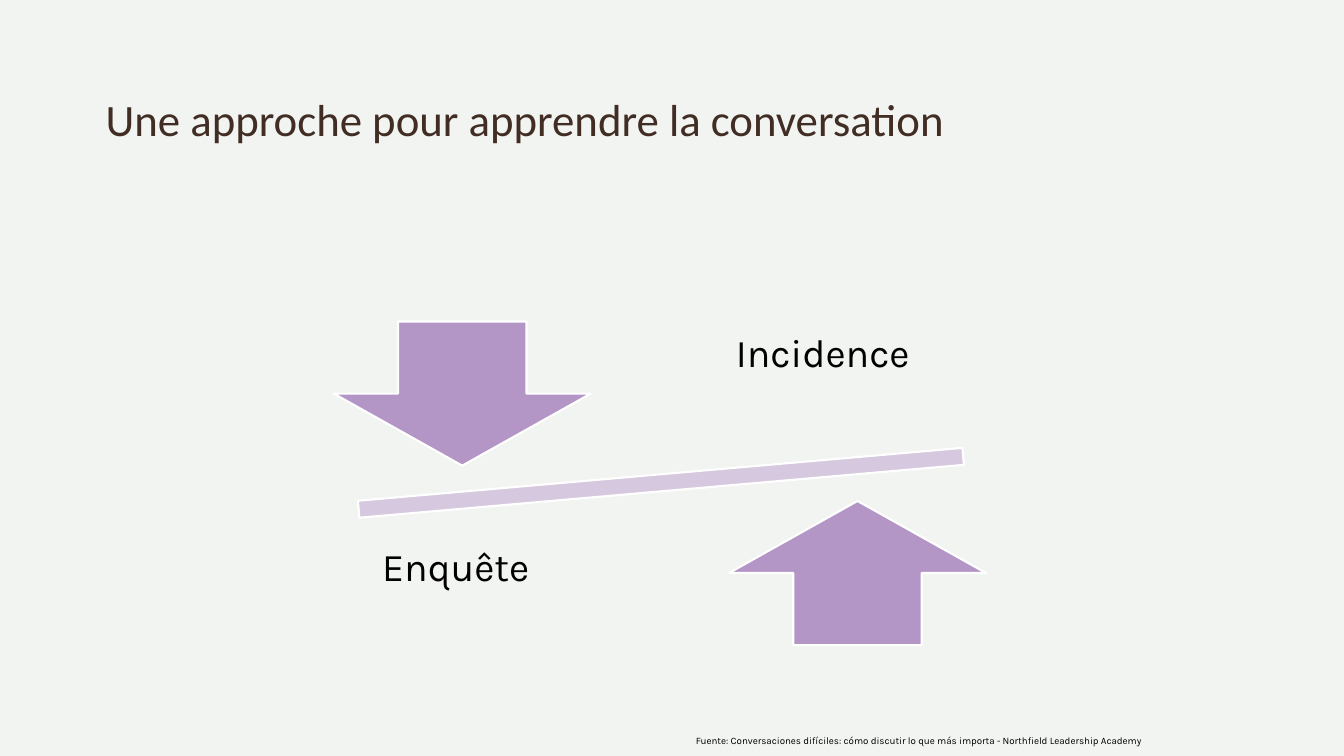
"""Build the slide about balancing inquiry and advocacy in a conversation."""
from dataclasses import dataclass

import pptx
import pptx.util
import pptx.dml.color
import pptx.enum.shapes
import pptx.enum.text
import pptx.shapes.autoshape
import pptx.slide

Inches = pptx.util.Inches
RGBColor = pptx.dml.color.RGBColor
Kind = pptx.enum.shapes.MSO_SHAPE
Align = pptx.enum.text.PP_ALIGN
Anchor = pptx.enum.text.MSO_ANCHOR

PAPER = RGBColor(0xF2, 0xF4, 0xF1)
BROWN = RGBColor(0x41, 0x2D, 0x24)
BLACK = RGBColor(0, 0, 0)
WHITE = RGBColor(0xFF, 0xFF, 0xFF)
LILAC = RGBColor(0xD6, 0xC9, 0xDF)
PURPLE = RGBColor(0xB4, 0x96, 0xC6)


@dataclass
class Figure:
    kind: Kind
    box: tuple[float, float, float, float]
    fill: RGBColor
    turn: float = 0


@dataclass
class Label:
    text: str
    box: tuple[float, float, float, float]
    size: float
    font: str = "Karla"
    color: RGBColor = BLACK
    align: Align = Align.CENTER
    anchor: Anchor = Anchor.MIDDLE
    inset: tuple[float, float, float, float] = (0.1, 0.05, 0.1, 0.05)
    space: float = 1.0


FIGURES = [
    Figure(Kind.MATH_MINUS, (2.46, 4.43, 8.19, 0.72), LILAC, 355),
    Figure(Kind.DOWN_ARROW, (3.31, 3.19, 2.55, 1.43), PURPLE),
    Figure(Kind.UP_ARROW, (7.23, 4.97, 2.55, 1.43), PURPLE),
]
LABELS = [
    Label("Une approche pour apprendre la conversation", (0.95, 0.64, 11.43, 1.38), 32,
          "Calibri", BROWN, Align.LEFT, Anchor.BOTTOM, (0.1, 0.05, 0.1, 0.58)),
    Label("Incidence", (6.8, 3.01, 2.72, 1.5), 28, inset=(0.22, 0.22, 0.22, 0.7), space=0.9),
    Label("Enquête", (3.57, 5.08, 2.72, 1.5), 28, inset=(0, 0.22, 0.82, 0.6), space=0.9),
    Label("Fuente: Conversaciones difíciles: cómo discutir lo que más importa"
          " - Northfield Leadership Academy",
          (1.92, 7.24, 9.5, 0.22), 7, align=Align.RIGHT, anchor=Anchor.TOP),
]


def draw_figure(slide: pptx.slide.Slide, item: Figure) -> None:
    shape = slide.shapes.add_shape(item.kind, *map(Inches, item.box))
    shape.shadow.inherit = False
    shape.rotation = item.turn
    shape.fill.solid()
    shape.fill.fore_color.rgb = item.fill
    shape.line.color.rgb = WHITE
    shape.line.width = pptx.util.Pt(1.5)


def draw_label(slide: pptx.slide.Slide, item: Label) -> None:
    frame = slide.shapes.add_textbox(*map(Inches, item.box)).text_frame
    frame.word_wrap = True
    frame.vertical_anchor = item.anchor
    left, top, right, bottom = map(Inches, item.inset)
    frame.margin_left, frame.margin_top = left, top
    frame.margin_right, frame.margin_bottom = right, bottom
    frame.text = item.text
    line = frame.paragraphs[0]
    line.alignment = item.align
    line.line_spacing = item.space
    font = line.runs[0].font
    font.name = item.font
    font.size = pptx.util.Pt(item.size)
    font.color.rgb = item.color


def main() -> None:
    deck = pptx.Presentation()
    deck.slide_width, deck.slide_height = Inches(13.33), Inches(7.5)
    slide = deck.slides.add_slide(deck.slide_layouts[6])
    slide.background.fill.solid()
    slide.background.fill.fore_color.rgb = PAPER
    for item in FIGURES:
        draw_figure(slide, item)
    for item in LABELS:
        draw_label(slide, item)
    deck.save("out.pptx")


if __name__ == "__main__":
    main()
